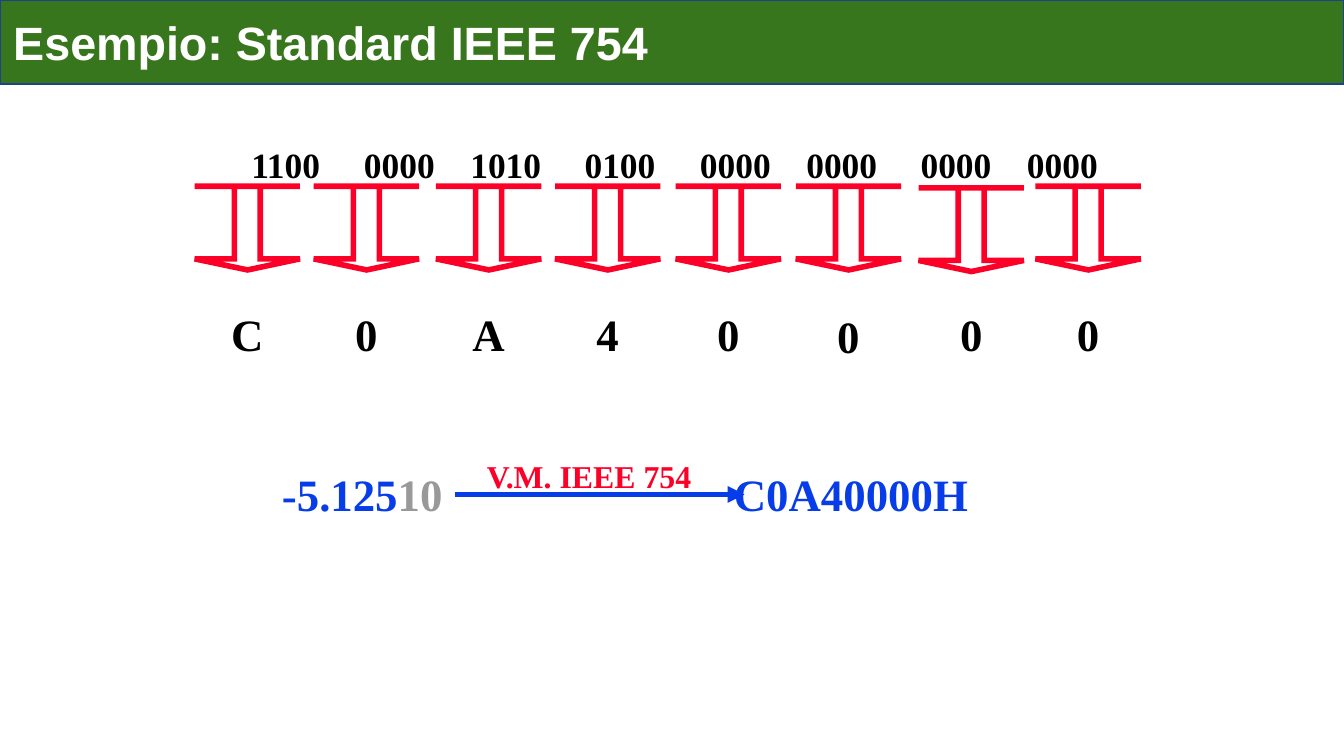
from itertools import accumulate

from lxml import etree
from pptx import Presentation
from pptx import util as u
from pptx.dml.color import RGBColor
from pptx.enum import shapes, text
from pptx.oxml import ns

GREEN = RGBColor(0x38, 0x76, 0x1D)
NAVY = RGBColor(0x1C, 0x45, 0x87)
RED = RGBColor(0xFC, 0x01, 0x28)
BLUE = RGBColor(0x06, 0x3D, 0xE8)
GREY = RGBColor(0x99, 0x99, 0x99)
BLACK = RGBColor(0, 0, 0)
WHITE = RGBColor(0xFF, 0xFF, 0xFF)

HEX_DIGITS = "C0A40000"
NIBBLES = [f"{int(digit, 16):04b}" for digit in HEX_DIGITS]
NIBBLE_GAPS = [2.13, 2.01, 2.16, 2.18, 2.01, 2.16, 2.01]
ARROW_LEFTS = [3.68, 5.93, 8.24, 10.49, 12.77, 15.04, 17.36, 19.57]
ARROW_TOPS = [3.52] * 6 + [3.55, 3.52]
DIGIT_TOPS = [5.69] * 5 + [5.72, 5.69, 5.69]
ARROW_WIDTH = 1.99
ARROW_OUTLINE = [(0, 0), (1.99, 0), (1.24, 0), (1.24, 1.37), (1.99, 1.37),
                 (1, 1.58), (0, 1.37), (0.75, 1.37), (0.75, 0)]


class SlideBuilder:
    body_font = "Times New Roman"
    title_font = "Arial"
    stroke = u.Pt(3)

    def __init__(self, slide):
        self.slide = slide

    def style(self, font, name, size):
        font.name = name
        font.size = u.Pt(size)
        font.bold = True

    def title(self, wording, width, height):
        banner = self.slide.shapes.title
        banner.left, banner.top = u.Cm(0), u.Cm(0)
        banner.width, banner.height = width, u.Cm(height)
        banner.fill.solid()
        banner.fill.fore_color.rgb = GREEN
        banner.line.color.rgb = NAVY
        banner.line.width = u.Pt(0.75)
        frame = banner.text_frame
        frame.text = wording
        frame.vertical_anchor = text.MSO_ANCHOR.MIDDLE
        frame.auto_size = text.MSO_AUTO_SIZE.NONE
        frame.margin_left = frame.margin_right = u.Cm(0.25)
        frame.margin_top = frame.margin_bottom = u.Cm(0.25)
        heading = frame.paragraphs[0]
        heading.alignment = text.PP_ALIGN.LEFT
        self.style(heading.font, self.title_font, 25)
        heading.font.color.rgb = WHITE

    def outline(self, parent, left, top, corners):
        points = [(u.Cm(left + x), u.Cm(top + y)) for x, y in corners]
        builder = parent.shapes.build_freeform(*points[0])
        builder.add_line_segments(points[1:], close=True)
        shape = builder.convert_to_shape()
        shape.shadow.inherit = False
        shape.fill.background()
        return shape

    def text(self, parent, box, size, parts, centered=False, tabs=(), inset=0.23):
        left, top, width, height = box
        corners = [(0, 0), (width, 0), (width, height), (0, height)]
        label = self.outline(parent, left, top, corners)
        label.line.fill.background()
        frame = label.text_frame
        frame.word_wrap = True
        frame.vertical_anchor = text.MSO_ANCHOR.TOP
        frame.margin_left, frame.margin_right = u.Cm(inset), u.Cm(0.23)
        frame.margin_top = frame.margin_bottom = u.Cm(0.11)
        paragraph = frame.paragraphs[0]
        paragraph.alignment = text.PP_ALIGN.CENTER if centered else text.PP_ALIGN.LEFT
        self.style(paragraph.font, self.body_font, size)
        for wording, color in parts:
            run = paragraph.add_run()
            run.text = wording
            run.font.color.rgb = color
        if tabs:
            stops = etree.Element(ns.qn("a:tabLst"))
            for position in tabs:
                etree.SubElement(stops, ns.qn("a:tab"), pos=str(u.Cm(position)), algn="l")
            paragraph._p.get_or_add_pPr().insert(0, stops)

    def block_arrow(self, parent, left, top):
        arrow = self.outline(parent, left, top, ARROW_OUTLINE)
        arrow.line.color.rgb = RED
        arrow.line.width = self.stroke
        line = arrow._element.spPr.find(ns.qn("a:ln"))
        etree.SubElement(line, ns.qn("a:miter"), lim="800000")

    def line_arrow(self, parent, start, end):
        arrow = parent.shapes.add_connector(
            shapes.MSO_CONNECTOR.STRAIGHT, *map(u.Cm, start + end))
        arrow.line.color.rgb = BLUE
        arrow.line.width = self.stroke
        properties = arrow._element.spPr
        etree.SubElement(properties.find(ns.qn("a:ln")), ns.qn("a:tailEnd"), type="triangle")
        etree.SubElement(properties, ns.qn("a:effectLst"))

    def group(self):
        return self.slide.shapes.add_group_shape()


def main():
    deck = Presentation()
    deck.slide_width, deck.slide_height = u.Cm(25.4), u.Cm(14.28)
    slide = deck.slides.add_slide(deck.slide_layouts[5])
    builder = SlideBuilder(slide)
    builder.title("Esempio: Standard IEEE 754", deck.slide_width, 1.59)

    builder.text(slide, (3.89, 2.59, 17.91, 0.89), 19, [("\t".join(NIBBLES), BLACK)],
                 tabs=list(accumulate(NIBBLE_GAPS)), inset=0.86)

    for digit, left, arrow_top, digit_top in zip(
            HEX_DIGITS, ARROW_LEFTS, ARROW_TOPS, DIGIT_TOPS):
        conversion = builder.group()
        builder.block_arrow(conversion, left, arrow_top)
        digit_width = 1.12 if digit.isalpha() else 0.91
        digit_left = left + (ARROW_WIDTH - digit_width) / 2
        builder.text(conversion, (digit_left, digit_top, digit_width, 1.09), 24,
                     [(digit, BLACK)], centered=True)

    result = builder.group()
    builder.text(result, (5.1, 8.71, 14.02, 1.09), 24,
                 [("-5.125", BLUE), ("10", GREY), (f"\t{HEX_DIGITS}H", BLUE)], tabs=[8.54])
    builder.line_arrow(result, (8.59, 9.34), (14.07, 9.34))
    builder.text(result, (8.76, 8.51, 4.75, 0.84), 17, [("V.M. IEEE 754", RED)], centered=True)

    deck.save("out.pptx")


if __name__ == "__main__":
    main()
